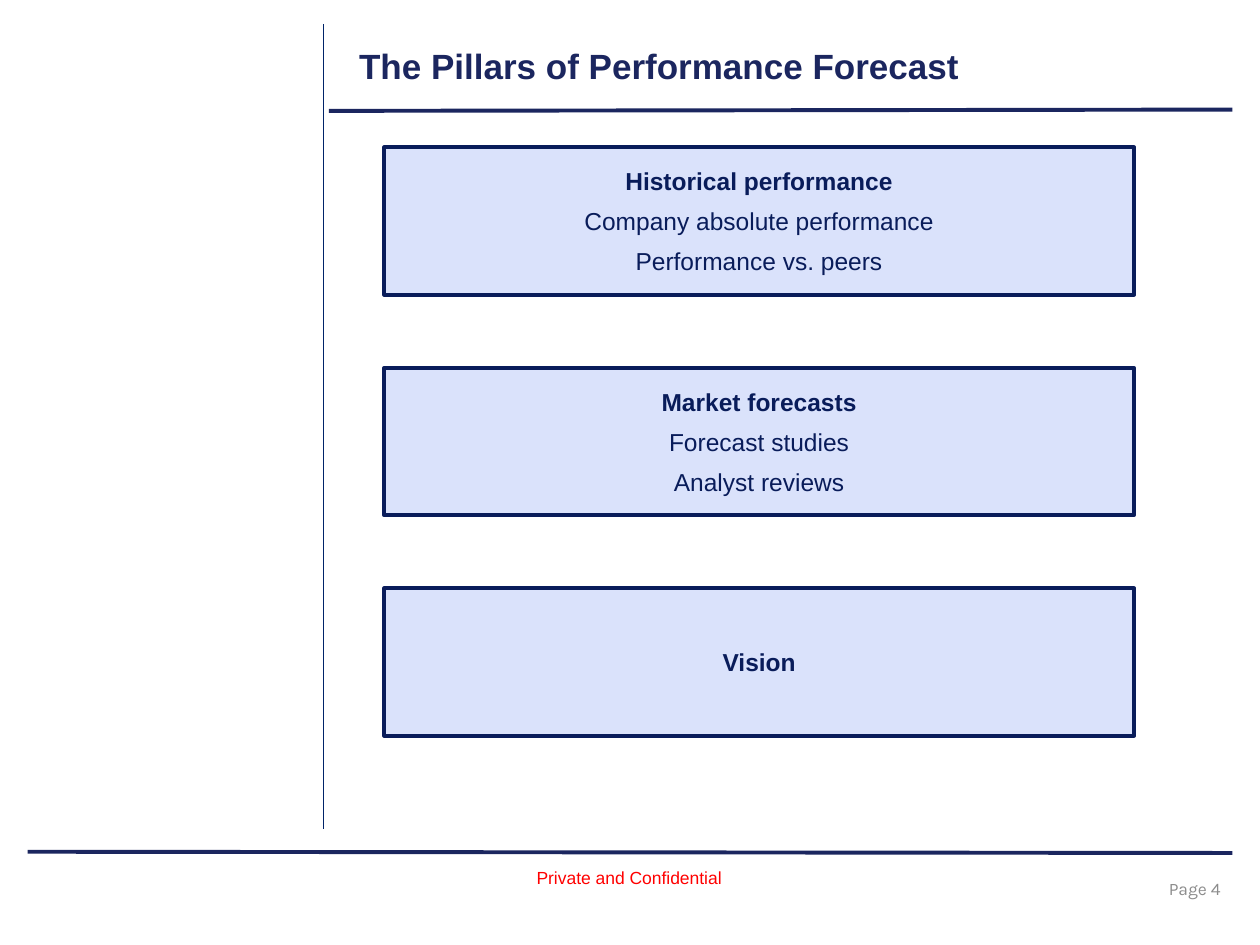
"""Build the slide on the pillars of performance forecast."""
from dataclasses import dataclass

from lxml import etree
from pptx import Presentation
from pptx.dml.color import RGBColor
from pptx.enum.shapes import MSO_CONNECTOR, MSO_SHAPE
from pptx.enum.text import MSO_ANCHOR, MSO_AUTO_SIZE, PP_ALIGN
from pptx.oxml.ns import qn
from pptx.util import Pt

LINE = MSO_CONNECTOR.STRAIGHT
RECT = MSO_SHAPE.RECTANGLE
TOP, MID = MSO_ANCHOR.TOP, MSO_ANCHOR.MIDDLE
LEFT, MIDST, RIGHT = PP_ALIGN.LEFT, PP_ALIGN.CENTER, PP_ALIGN.RIGHT
GROW, FIXED = MSO_AUTO_SIZE.SHAPE_TO_FIT_TEXT, MSO_AUTO_SIZE.NONE

HUES = {
    "navy": "1B265F",
    "ink": "091C5A",
    "blue": "002368",
    "pale": "DAE2FB",
    "red": "FF0000",
    "gray": "8C8C8C",
}

BOX_LEFT, BOX_TOP = 219.6, 84.24
BOX_WIDTH, BOX_HEIGHT = 428.4, 84.24
BOX_STEP = 126


@dataclass
class Rule:
    x1: float
    y1: float
    x2: float
    y2: float
    hue: str
    width: float


@dataclass
class Pillar:
    head: str
    items: tuple[str, ...] = ()


RULES = [
    Rule(15.84, 486.72, 704.16, 487.44, "navy", 2.25),
    Rule(187.92, 63.36, 704.16, 62.64, "navy", 2.25),
    Rule(185.04, 13.68, 185.04, 61.92, "blue", 0.75),
    Rule(185.04, 18, 185.04, 473.76, "blue", 0.75),
]

PILLARS = [
    Pillar("Historical performance",
           ("Company absolute performance", "Performance vs. peers")),
    Pillar("Market forecasts", ("Forecast studies", "Analyst reviews")),
    Pillar("Vision"),
]


def tint(name: str) -> RGBColor:
    return RGBColor.from_string(HUES[name])


def write(frame, text: str, *, size: float, hue: str, face: str = "Arial",
          bold: bool = False, align=LEFT, anchor=TOP, after: float = 0,
          wrap: bool = True, fit=FIXED, more: bool = False) -> None:
    frame.word_wrap = wrap
    frame.auto_size = fit
    frame.vertical_anchor = anchor
    para = frame.add_paragraph() if more else frame.paragraphs[0]
    para.alignment = align
    para.space_before = Pt(0)
    para.space_after = Pt(after)
    run = para.add_run()
    run.text = text
    font = run.font
    font.name, font.size, font.bold = face, Pt(size), bold
    font.color.rgb = tint(hue)


def draw_rule(slide, rule: Rule) -> None:
    line = slide.shapes.add_connector(
        LINE, Pt(rule.x1), Pt(rule.y1), Pt(rule.x2), Pt(rule.y2))
    line.line.color.rgb = tint(rule.hue)
    line.line.width = Pt(rule.width)
    etree.SubElement(line._element.spPr, qn("a:effectLst"))


def draw_box(slide, pillar: Pillar, top: float) -> None:
    box = slide.shapes.add_shape(
        RECT, Pt(BOX_LEFT), Pt(top), Pt(BOX_WIDTH), Pt(BOX_HEIGHT))
    box.shadow.inherit = False
    box.fill.solid()
    box.fill.fore_color.rgb = tint("pale")
    box.line.color.rgb = tint("ink")
    box.line.width = Pt(2.25)
    for row, text in enumerate((pillar.head, *pillar.items)):
        write(box.text_frame, text, size=14, hue="ink", bold=row == 0,
              align=MIDST, anchor=MID, after=6, more=row > 0)


def draw_title(slide, text: str) -> None:
    title = slide.shapes.title
    title.left, title.top = Pt(198), Pt(21.6)
    title.width, title.height = Pt(486), Pt(38.16)
    write(title.text_frame, text, size=20, hue="navy", bold=True)


def draw_foot(slide) -> None:
    page = slide.shapes.add_textbox(
        Pt(539.28), Pt(493.2), Pt(167.76), Pt(28.8))
    write(page.text_frame, "Page 4 ", size=10, hue="gray", face="Karla",
          align=RIGHT, anchor=MID)
    note = slide.shapes.add_textbox(
        Pt(299.52), Pt(491.76), Pt(120.96), Pt(19.44))
    write(note.text_frame, "Private and Confidential", size=10, hue="red",
          wrap=False, fit=GROW)


def main() -> None:
    deck = Presentation()
    deck.slide_width, deck.slide_height = Pt(720), Pt(540)
    slide = deck.slides.add_slide(deck.slide_layouts[5])
    for rule in RULES:
        draw_rule(slide, rule)
    draw_foot(slide)
    draw_title(slide, "The Pillars of Performance Forecast")
    for row, pillar in enumerate(PILLARS):
        draw_box(slide, pillar, BOX_TOP + row * BOX_STEP)
    deck.save("out.pptx")


if __name__ == "__main__":
    main()
